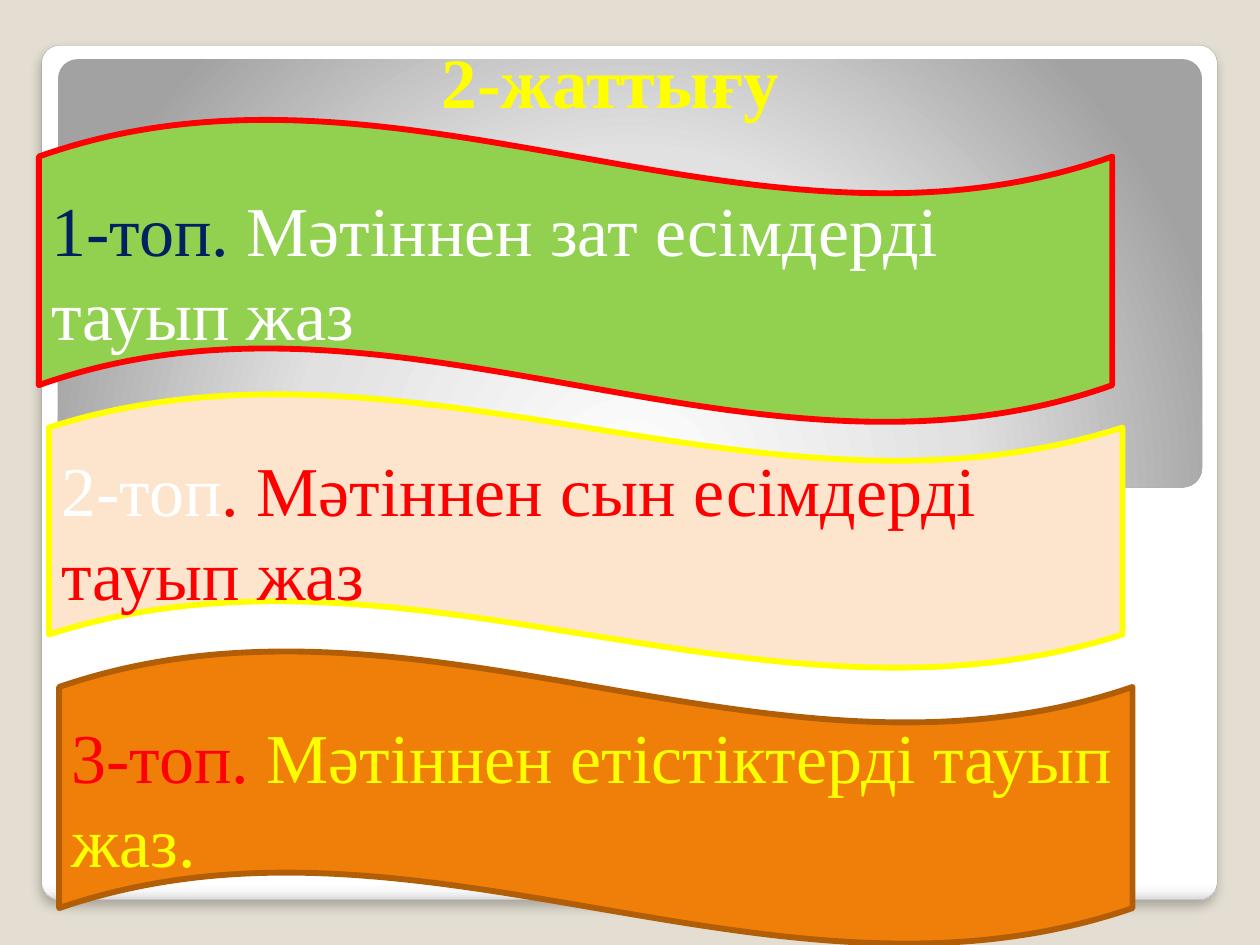
from dataclasses import dataclass

from lxml.etree import SubElement
from pptx import Presentation
from pptx.dml.color import RGBColor
from pptx.enum.shapes import MSO_SHAPE
from pptx.enum.text import MSO_ANCHOR, PP_ALIGN
from pptx.oxml.ns import qn
from pptx.util import Pt


@dataclass(frozen=True)
class Theme:
    font: str = "Times New Roman"
    title_size: float = 40.5
    body_size: float = 40
    wave_line: float = 3.35
    panel_line: float = 0.16
    backdrop: str = "E3DED1"
    panel_edge: str = "A4A4A4"
    white: str = "FFFFFF"
    yellow: str = "FFFF00"
    red: str = "FF0000"
    navy: str = "002060"
    green: str = "92D050"
    peach: str = "FDE5CD"
    orange: str = "F07F09"
    brown: str = "B25E07"
    panel_stops: tuple = ((0, "FFFFFF"), (98, "FFFFFF"), (99, "F7F7F7"), (100, "DADADA"))
    glow_stops: tuple = ((0, "FFFFFF"), (55, "E1E1E1"), (100, "A2A2A2"))


@dataclass(frozen=True)
class Box:
    left: float
    top: float
    width: float
    height: float

    def lengths(self) -> list:
        return [Pt(v) for v in (self.left, self.top, self.width, self.height)]


@dataclass(frozen=True)
class Task:
    box: Box
    fill: str
    line: str
    runs: tuple  # (text, colour) pairs


T = Theme()
WAVE_LEFT, WAVE_STEP, WAVE_WIDTH = 22.2, 5.8, 613.4

PANEL = Box(23.8, 25.9, 671.8, 488.2)
GLOW = Box(33.1, 33.8, 653.8, 244.8)
TITLE = Box(39.6, 33.8, 618.5, 39.6)


def wave_box(index: int, top: float, height: float) -> Box:
    return Box(WAVE_LEFT + index * WAVE_STEP, top, WAVE_WIDTH, height)


TASKS = (
    Task(wave_box(0, 67.7, 174.2), T.green, T.red,
         (("1-топ. ", T.navy), ("Мәтіннен зат есімдерді тауып жаз", T.white))),
    Task(wave_box(1, 224.6, 157.7), T.peach, T.yellow,
         (("2-топ", T.white), (". Мәтіннен сын есімдерді тауып жаз", T.red))),
    Task(wave_box(2, 371.5, 168.5), T.orange, T.brown,
         (("3-топ.", T.red), (" Мәтіннен етістіктерді тауып жаз.", T.yellow))),
)


def rgb(colour: str) -> RGBColor:
    return RGBColor.from_string(colour)


def add_shape(s, kind, box: Box):
    sp = s.shapes.add_shape(kind, *box.lengths())
    sp.shadow.inherit = False
    return sp


def set_line(sp, colour: str, width: float) -> None:
    sp.line.color.rgb = rgb(colour)
    sp.line.width = Pt(width)


def add_gradient_panel(s, box: Box, corner: float, stops: tuple):
    """Add a rounded panel and return it with its still undirected gradient."""
    sp = add_shape(s, MSO_SHAPE.ROUNDED_RECTANGLE, box)
    sp.adjustments[0] = corner
    sp.fill.gradient()
    grad = sp._element.spPr.find(qn("a:gradFill"))
    for child in list(grad):
        grad.remove(child)
    stop_list = SubElement(grad, qn("a:gsLst"))
    for position, colour in stops:
        stop = SubElement(stop_list, qn("a:gs"), pos=str(position * 1000))
        SubElement(stop, qn("a:srgbClr"), val=colour)
    return sp, grad


def add_panel(s) -> None:
    sp, grad = add_gradient_panel(s, PANEL, 0.021, T.panel_stops)
    SubElement(grad, qn("a:lin"), ang="5400000", scaled="0")
    set_line(sp, T.panel_edge, T.panel_line)
    effects = sp._element.spPr.find(qn("a:effectLst"))
    shadow = SubElement(effects, qn("a:outerShdw"), blurRad=str(Pt(6)),
                        dist=str(Pt(4)), dir="5400000", rotWithShape="0")
    colour = SubElement(shadow, qn("a:srgbClr"), val="000000")
    SubElement(colour, qn("a:alpha"), val="25000")


def add_glow(s) -> None:
    """Add the grey panel lit from below its lower edge."""
    sp, grad = add_gradient_panel(s, GLOW, 0.046, T.glow_stops)
    circle = SubElement(grad, qn("a:path"), path="circle")
    SubElement(circle, qn("a:fillToRect"), l="50000", t="175000", r="50000", b="-75000")
    sp.line.fill.background()


def write(sp, runs: tuple, size: float, align, anchor, bold: bool = False) -> None:
    tf = sp.text_frame
    tf.word_wrap = True
    tf.vertical_anchor = anchor
    p = tf.paragraphs[0]
    p.alignment = align
    for text, colour in runs:
        r = p.add_run()
        r.text = text
        for name, value in {"name": T.font, "size": Pt(size), "bold": bold}.items():
            setattr(r.font, name, value)
        r.font.color.rgb = rgb(colour)


def add_title(s) -> None:
    sp = s.shapes.add_textbox(*TITLE.lengths())
    for side in ("left", "top", "right", "bottom"):
        setattr(sp.text_frame, f"margin_{side}", Pt(3.6))
    write(sp, (("2-жаттығу", T.yellow),), T.title_size,
          PP_ALIGN.CENTER, MSO_ANCHOR.BOTTOM, bold=True)


def add_task(s, task: Task) -> None:
    sp = add_shape(s, MSO_SHAPE.WAVE, task.box)
    sp.fill.solid()
    sp.fill.fore_color.rgb = rgb(task.fill)
    set_line(sp, task.line, T.wave_line)
    write(sp, task.runs, T.body_size, PP_ALIGN.LEFT, MSO_ANCHOR.MIDDLE)


def main() -> None:
    prs = Presentation()
    prs.slide_width, prs.slide_height = Pt(720), Pt(540)
    s = prs.slides.add_slide(prs.slide_layouts[6])
    s.background.fill.solid()
    s.background.fill.fore_color.rgb = rgb(T.backdrop)
    add_panel(s)
    add_glow(s)
    add_title(s)
    for task in TASKS:
        add_task(s, task)
    prs.save("out.pptx")


if __name__ == "__main__":
    main()
